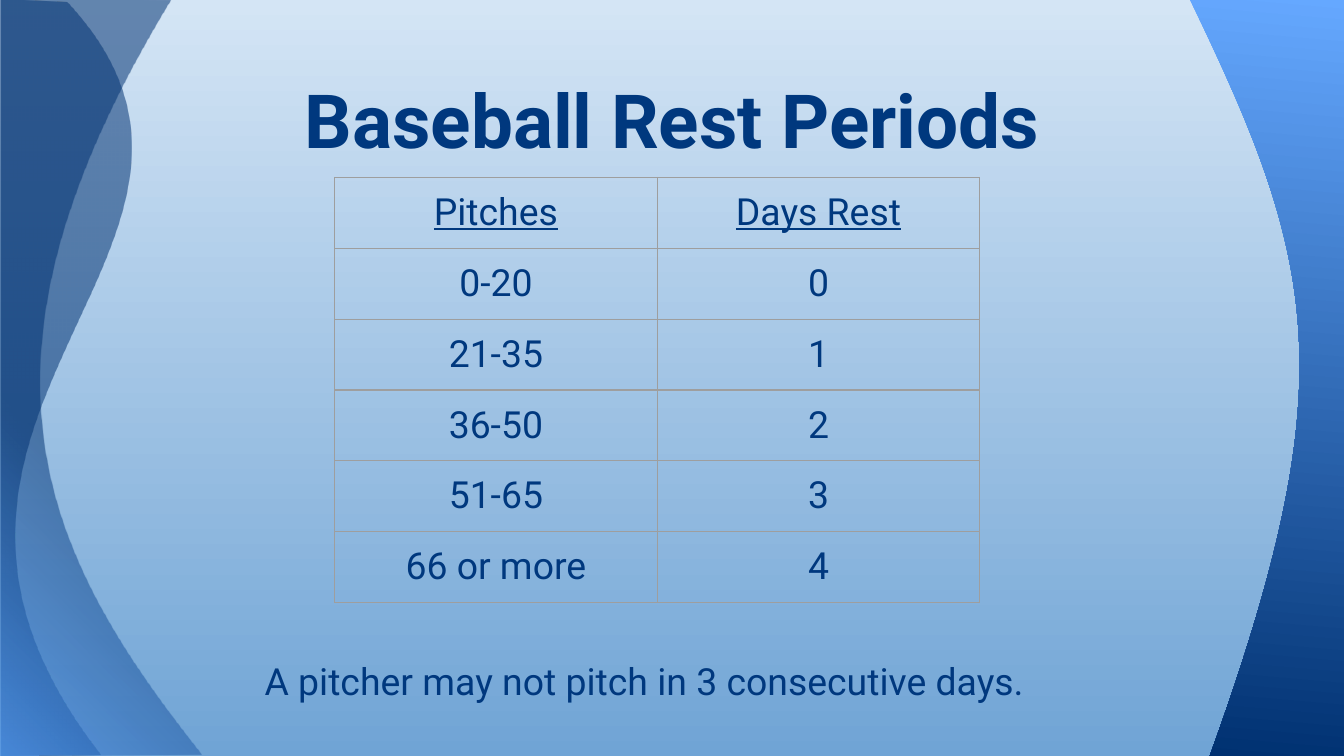
"""Build the baseball rest periods slide."""
from dataclasses import dataclass

import pptx
import pptx.dml.color
import pptx.enum.text
import pptx.oxml
import pptx.oxml.ns
import pptx.util
from pptx.util import Inches

Point = tuple[float, float]
RGB = pptx.dml.color.RGBColor.from_string
Align = pptx.enum.text.PP_ALIGN
Anchor = pptx.enum.text.MSO_ANCHOR
NS = pptx.oxml.ns.nsdecls("a")


@dataclass(frozen=True)
class Theme:
    font: str = "Roboto"
    ink: str = "00387E"
    border: str = "9E9E9E"
    sky_top: str = "D4E5F5"
    sky_bottom: str = "70A4D5"
    glow: str = "549FFF"
    navy: str = "003171"
    azure: str = "65A8FF"
    title_size: float = 40
    body_size: float = 20
    border_width: float = 0.75
    wave_opacity: int = 53


@dataclass(frozen=True)
class Wave:
    start: Point
    segments: list[tuple[Point, ...]]
    translucent: bool = True


THEME = Theme()
WAVES = [
    Wave((1.5, 5.61), [
        ((-0.01, 5.62),),
        ((-0.01, 3.74), (0, 1.86), (0, -0.02)),
        ((1.27, 0),),
        ((-0.38, 2.72), (0.33, 4.13), (1.5, 5.61)),
    ]),
    Wave((0.75, 5.61), [
        ((0.01, 5.62),),
        ((0.01, 3.75), (0.01, 1.88), (0.01, 0)),
        ((0.5, 0.02),),
        ((2.17, 1.82), (-1.22, 3.08), (0.75, 5.61)),
    ]),
    Wave((10.05, 5.63), [
        ((9, 5.63),),
        ((10.01, 2.84), (9.81, 1.96), (8.85, -0.01)),
        ((10.05, -0.01),),
        ((10.05, 5.63),),
    ], translucent=False),
]
ROWS = [
    ("Pitches", "Days Rest"),
    ("0-20", "0"),
    ("21-35", "1"),
    ("36-50", "2"),
    ("51-65", "3"),
    ("66 or more", "4"),
]


def fill_linear(fill, first: str, last: str, angle: float) -> None:
    """Fill with two colours along an anticlockwise angle."""
    fill.gradient()
    fill.gradient_angle = angle
    for stop, color, position in zip(fill.gradient_stops, (first, last), (0, 1)):
        stop.color.rgb = RGB(color)
        stop.position = position


def fill_glow(shape) -> None:
    """Fill with a translucent glow from the bottom left corner."""
    stops = "".join(
        f'<a:gs pos="{pos * 1000}"><a:srgbClr val="{color}">'
        f'<a:alpha val="{THEME.wave_opacity * 1000}"/></a:srgbClr></a:gs>'
        for pos, color in ((0, THEME.glow), (41, THEME.navy), (100, THEME.navy))
    )
    shape.fill.background()
    old = shape._element.spPr.find(pptx.oxml.ns.qn("a:noFill"))
    old.getparent().replace(old, pptx.oxml.parse_xml(
        f'<a:gradFill {NS} rotWithShape="1"><a:gsLst>{stops}</a:gsLst>'
        '<a:path path="circle"><a:fillToRect t="100000" r="100000"/></a:path></a:gradFill>'
    ))


def add_wave(s, wave: Wave) -> None:
    """Draw a closed outline of straight and cubic segments."""
    points = [(Inches(x), Inches(y)) for seg in wave.segments for x, y in seg]
    builder = s.shapes.build_freeform(*map(Inches, wave.start))
    builder.add_line_segments(points, close=True)
    sp = builder.convert_to_shape()
    lines = iter(list(sp._element.iter(pptx.oxml.ns.qn("a:lnTo"))))
    for seg in wave.segments:
        nodes = [next(lines) for _ in seg]
        if len(nodes) == 3:
            curve = pptx.oxml.parse_xml(f"<a:cubicBezTo {NS}/>")
            nodes[0].addprevious(curve)
            for node in nodes:
                curve.append(node[0])
                node.getparent().remove(node)
    sp.shadow.inherit = False
    sp.line.fill.background()
    if wave.translucent:
        fill_glow(sp)
    else:
        fill_linear(sp.fill, THEME.azure, THEME.navy, 265)


def write(tf, text: str, *, size: float = THEME.body_size, bold: bool = False,
          underline: bool = False, align=Align.CENTER) -> None:
    """Write one formatted paragraph."""
    p = tf.paragraphs[0]
    p.alignment = align
    r = p.add_run()
    r.text = text
    r.font.name = THEME.font
    r.font.size = pptx.util.Pt(size)
    r.font.bold = bold
    r.font.underline = underline
    r.font.color.rgb = RGB(THEME.ink)


def set_frame(tf, anchor) -> None:
    """Set wrapping, insets and anchor of a text frame."""
    tf.word_wrap = True
    tf.auto_size = pptx.enum.text.MSO_AUTO_SIZE.NONE
    tf.vertical_anchor = anchor
    tf.margin_left = tf.margin_right = tf.margin_top = tf.margin_bottom = Inches(0.1)


def add_title(s, text: str) -> None:
    """Place the title above the waves."""
    sp = s.shapes.title
    sp.left, sp.top, sp.width, sp.height = map(Inches, (0.5, 0.23, 9, 1.09))
    sp._element.getparent().append(sp._element)
    set_frame(sp.text_frame, Anchor.BOTTOM)
    write(sp.text_frame, text, size=THEME.title_size, bold=True)


def format_cell(cell) -> None:
    """Give a cell thin borders, even margins and no fill."""
    tc_pr = cell._tc.get_or_add_tcPr()
    for side in "LRTB":
        tc_pr.append(pptx.oxml.parse_xml(
            f'<a:ln{side} {NS} w="{pptx.util.Pt(THEME.border_width)}"><a:solidFill>'
            f'<a:srgbClr val="{THEME.border}"/></a:solidFill></a:ln{side}>'
        ))
    cell.fill.background()
    cell.margin_left = cell.margin_right = Inches(0.1)
    cell.margin_top = cell.margin_bottom = Inches(0.1)


def add_rest_table(s, rows: list[tuple[str, str]]) -> None:
    """Add the table of pitches and rest days."""
    box = map(Inches, (2.49, 1.32, 4.8, 3.16))
    table = s.shapes.add_table(len(rows), len(rows[0]), *box).table
    table.first_row = table.horz_banding = False
    for i, row in enumerate(rows):
        for j, text in enumerate(row):
            cell = table.cell(i, j)
            format_cell(cell)
            write(cell.text_frame, text, underline=i == 0)


def add_note(s, text: str) -> None:
    """Add the rule below the table."""
    tf = s.shapes.add_textbox(*map(Inches, (1.87, 4.7, 6.15, 0.73))).text_frame
    set_frame(tf, Anchor.MIDDLE)
    write(tf, text, align=Align.LEFT)


def main() -> None:
    """Build and save the slide."""
    prs = pptx.Presentation()
    prs.slide_width = Inches(10)
    prs.slide_height = prs.slide_width * 9 // 16
    s = prs.slides.add_slide(prs.slide_layouts.get_by_name("Title Only"))
    fill_linear(s.background.fill, THEME.sky_top, THEME.sky_bottom, 270)
    for wave in WAVES:
        add_wave(s, wave)
    add_title(s, "Baseball Rest Periods")
    add_rest_table(s, ROWS)
    add_note(s, "A pitcher may not pitch in 3 consecutive days.")
    prs.save("out.pptx")


if __name__ == "__main__":
    main()
